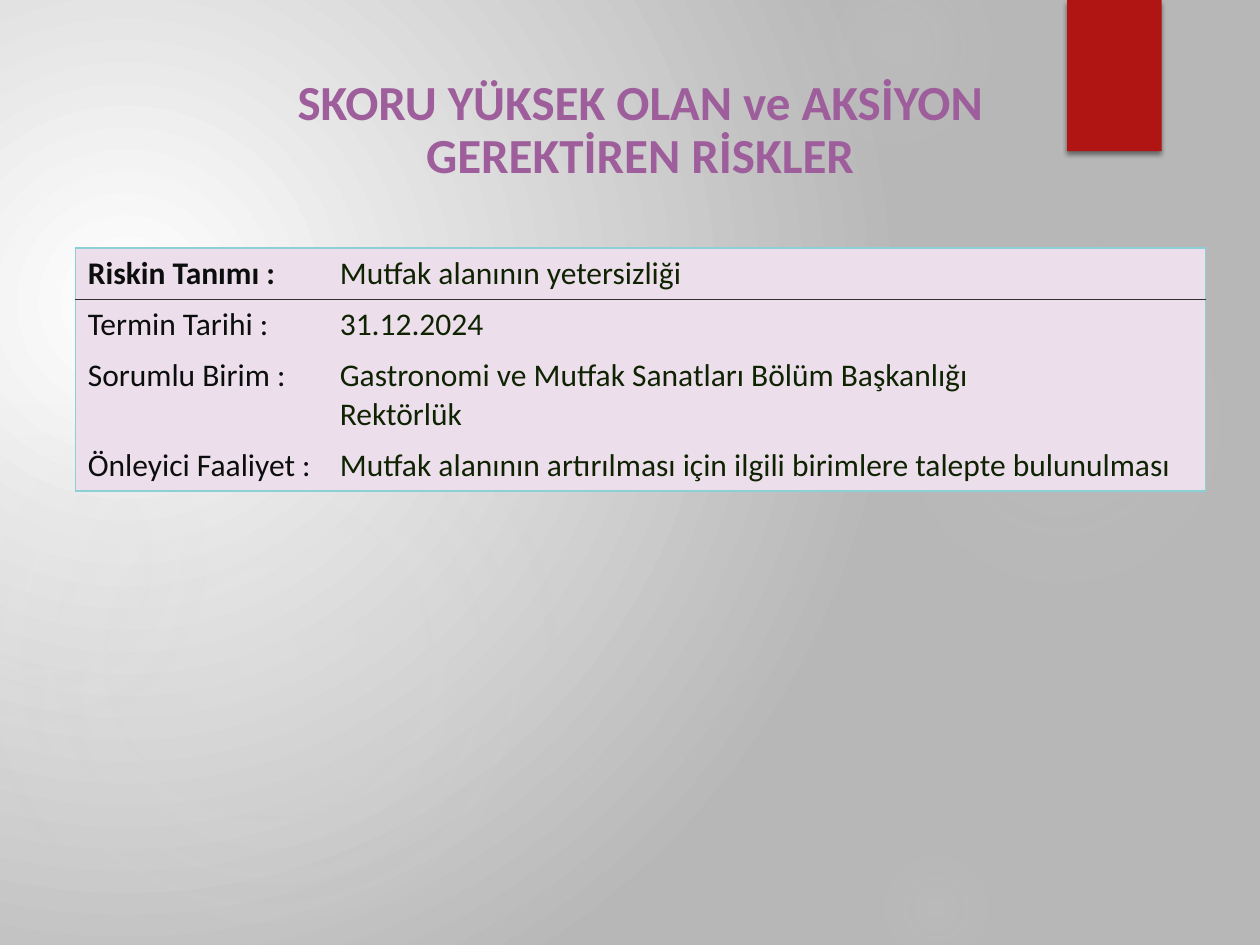
from pptx import Presentation
from pptx.dml.color import RGBColor
from pptx.enum.shapes import MSO_SHAPE
from pptx.enum.text import MSO_ANCHOR, PP_ALIGN
from pptx.oxml import parse_xml
from pptx.oxml.ns import nsdecls, qn
from pptx.util import Pt

WHITE = RGBColor(0xFF, 0xFF, 0xFF)
GREY = RGBColor(0xB7, 0xB7, 0xB7)
GLOW = RGBColor(0xD9, 0xD9, 0xD9)
RED = RGBColor(0xB0, 0x15, 0x13)
PURPLE = RGBColor(0x9E, 0x5E, 0x9B)
PINK = RGBColor(0xEC, 0xDF, 0xEB)
TEAL = RGBColor(0x8A, 0xD0, 0xD5)
DARK = RGBColor(0x30, 0x30, 0x30)
INK = RGBColor(0x0C, 0x0D, 0x0D)
GREEN = RGBColor(0x0F, 0x23, 0x03)
FONT = "Calibri"

GLOWS = [
    ((496, 132, 222), ((0, 7), (36, 6), (69, 0))),
    ((448, -36, 126), ((0, 14), (36, 7), (73, 0))),
    ((496, 480, 78), ((0, 9), (36, 5), (66, 0))),
    ((-12, 210, 330), ((0, 11), (36, 10), (75, 0))),
    ((-66, 228, 186), ((0, 8), (36, 8), (72, 0))),
]
RISKS = [
    ("Riskin Tanımı :", "Mutfak alanının yetersizliği"),
    ("Termin Tarihi :", "31.12.2024"),
    ("Sorumlu Birim :", "Gastronomi ve Mutfak Sanatları Bölüm Başkanlığı\nRektörlük"),
    ("Önleyici Faaliyet :",
     "Mutfak alanının artırılması için ilgili birimlere talepte bulunulması"),
]


def set_grad(host, stops, rect):
    marks = "".join(
        f'<a:gs pos="{pos * 1000}"><a:srgbClr val="{tone}">'
        f'<a:alpha val="{alpha * 1000}"/></a:srgbClr></a:gs>'
        for pos, tone, alpha in stops)
    sides = " ".join(f'{side}="{val * 1000}"' for side, val in zip("ltrb", rect))
    grad = parse_xml(
        f'<a:gradFill {nsdecls("a")} rotWithShape="1"><a:gsLst>{marks}</a:gsLst>'
        f'<a:path path="circle"><a:fillToRect {sides}/></a:path></a:gradFill>')
    solid = next(host.iter(qn("a:solidFill")))
    solid.getparent().replace(solid, grad)


def add_shape(slide, kind, box):
    shape = slide.shapes.add_shape(kind, *map(Pt, box))
    shape.shadow.inherit = False
    shape.fill.solid()
    shape.line.fill.background()
    return shape


def add_back(slide):
    slide.background.fill.solid()
    set_grad(slide.element.cSld.find(qn("p:bg")),
             ((0, WHITE, 100), (100, GREY, 100)), (45, 65, 125, 100))
    for (left, top, size), fades in GLOWS:
        disc = add_shape(slide, MSO_SHAPE.OVAL, (left, top, size, size))
        stops = [(pos, GLOW, alpha) for pos, alpha in fades]
        set_grad(disc.element.spPr, stops, (50, 50, 50, 50))


def add_tab(slide, box):
    tab = add_shape(slide, MSO_SHAPE.RECTANGLE, box)
    tab.fill.fore_color.rgb = RED
    tab.element.spPr.find(qn("a:effectLst")).append(parse_xml(
        f'<a:outerShdw {nsdecls("a")} blurRad="{Pt(3)}" dist="{Pt(2)}" dir="5400000">'
        '<a:srgbClr val="000000"><a:alpha val="45000"/></a:srgbClr></a:outerShdw>'))


def style(para, size, color, bold):
    for run in para.runs:
        font = run.font
        font.name, font.size, font.bold = FONT, Pt(size), bold
        font.color.rgb = color


def add_title(slide, box):
    frame = slide.shapes.add_textbox(*map(Pt, box)).text_frame
    frame.word_wrap = True
    frame.vertical_anchor = MSO_ANCHOR.BOTTOM
    frame.text = "SKORU YÜKSEK OLAN ve AKSİYON GEREKTİREN RİSKLER"
    para = frame.paragraphs[0]
    para.alignment = PP_ALIGN.CENTER
    para.line_spacing = 0.9
    para.space_after = Pt(6)
    style(para, 28, PURPLE, True)


def set_edges(cell, edges):
    props = cell._tc.get_or_add_tcPr()
    for spot, (side, edge) in enumerate(zip("LRTB", edges)):
        color, width = edge or (None, 0)
        fill = (f'<a:solidFill><a:srgbClr val="{color}"/></a:solidFill>'
                if edge else "<a:noFill/>")
        props.insert(spot, parse_xml(
            f'<a:ln{side} {nsdecls("a")} w="{Pt(width)}">{fill}</a:ln{side}>'))


def add_risks(slide, box):
    table = slide.shapes.add_table(len(RISKS), 2, *map(Pt, box)).table
    table.first_row = table.horz_banding = False
    label = 144
    table.columns[0].width = Pt(label)
    table.columns[1].width = Pt(box[2] - label)
    frame, rule = (TEAL, 1), (DARK, 0.5)
    levels = [frame, rule, None, None, frame]
    for row, texts in enumerate(RISKS):
        table.rows[row].height = Pt(51.2 if "\n" in texts[1] else 29.2)
        for col, text in enumerate(texts):
            cell = table.cell(row, col)
            cell.fill.solid()
            cell.fill.fore_color.rgb = PINK
            cell.text_frame.text = text
            for para in cell.text_frame.paragraphs:
                style(para, 18, (INK, GREEN)[col], row == col == 0)
            sides = [None, frame] if col else [frame, None]
            set_edges(cell, sides + levels[row:row + 2])


def main():
    deck = Presentation()
    deck.slide_width, deck.slide_height = Pt(720), Pt(540)
    slide = deck.slides.add_slide(deck.slide_layouts[6])
    add_back(slide)
    add_tab(slide, (609.8, 0, 54, 86.4))
    add_title(slide, (158.4, 41.8, 414.7, 67))
    add_risks(slide, (43, 141.8, 645.8, 138.8))
    deck.save("out.pptx")


if __name__ == "__main__":
    main()
